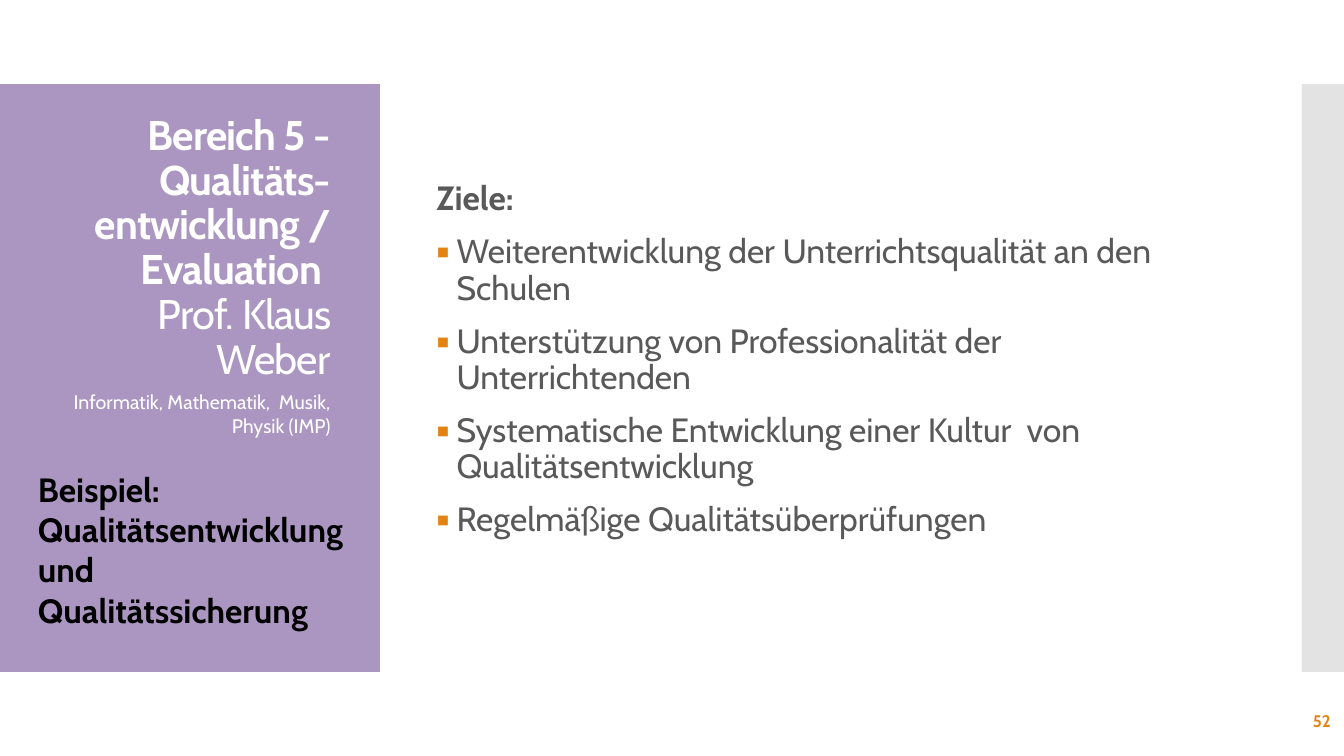
from pptx import Presentation
from pptx.dml.color import RGBColor
from pptx.enum.shapes import MSO_SHAPE as SHAPE
from pptx.enum.text import MSO_ANCHOR as ANCHOR, PP_ALIGN as ALIGN
from pptx.oxml.ns import qn
from pptx.util import Inches, Pt
from lxml.etree import SubElement

prs = Presentation()
prs.slide_width, prs.slide_height = Inches(13.33), Inches(7.5)
s = prs.slides.add_slide(prs.slide_layouts[6])
COL, ROW = prs.slide_width / 48, prs.slide_height / 36
rgb = RGBColor.from_string


def place(x, y, w, h):
    return int(x * COL), int(y * ROW), int(w * COL), int(h * ROW)


def add_run(p, text, size, color, bold=False):
    r = p.add_run()
    r.text = text
    r.font.name, r.font.size, r.font.bold = "Cabin", Pt(size), bold
    r.font.color.rgb = rgb(color)
    return r


for x, w, color, opacity in [(0, 13.57, "AA96C0", 100), (46.5, 1.5, "C8C8C8", 50)]:
    sp = s.shapes.add_shape(SHAPE.RECTANGLE, *place(x, 4, w, 28))
    sp.shadow.inherit = False
    sp.line.fill.background()
    sp.fill.solid()
    sp.fill.fore_color.rgb = rgb(color)
    if opacity < 100:
        clr = sp.fill._xPr.find(".//" + qn("a:srgbClr"))
        SubElement(clr, qn("a:alpha"), val=str(opacity * 1000))

frames = []
for x, y, w, h, anchor, align in [
    (1, 6, 11.16, 12.48, ANCHOR.BOTTOM, ALIGN.RIGHT),
    (1, 18.34, 11.16, 12.19, ANCHOR.TOP, ALIGN.RIGHT),
    (1, 22.08, 12.24, 8.26, ANCHOR.TOP, ALIGN.LEFT),
    (15.23, 4.56, 28.8, 26.88, ANCHOR.MIDDLE, ALIGN.LEFT),
    (41.87, 33.36, 6.01, 1.92, ANCHOR.MIDDLE, ALIGN.RIGHT),
]:
    tf = s.shapes.add_textbox(*place(x, y, w, h)).text_frame
    tf.word_wrap, tf.vertical_anchor = True, anchor
    tf.paragraphs[0].alignment = align
    frames.append(tf)
title, subjects, example, goals, number = frames

p = title.paragraphs[0]
p.line_spacing = 0.9
heading = add_run(p, "Bereich 5 - Qualitäts-entwicklung / Evaluation ", 29.6, "FFFFFF", True)
p.add_line_break()
speaker = add_run(p, "Prof. Klaus Weber", 29.6, "FFFFFF")
for r in (heading, speaker):
    r.font._element.set("spc", "-60")

add_run(subjects.paragraphs[0], "Informatik, Mathematik,  Musik, Physik (IMP)", 14, "FFFFFF")
add_run(example.paragraphs[0], "Beispiel: Qualitätsentwicklung und Qualitätssicherung", 24, "000000", True)
add_run(number.paragraphs[0], "52", 12, "E48312", True)

goals.margin_bottom = int(1.92 * ROW)
p = goals.paragraphs[0]
p.line_spacing = 0.9
add_run(p, "Ziele:", 24, "595959", True)
for goal in [
    "Weiterentwicklung der Unterrichtsqualität an den Schulen",
    "Unterstützung von Professionalität der Unterrichtenden",
    "Systematische Entwicklung einer Kultur  von Qualitätsentwicklung",
    "Regelmäßige Qualitätsüberprüfungen",
]:
    p = goals.add_paragraph()
    p.line_spacing, p.space_before = 0.9, Pt(12)
    pPr = p._p.get_or_add_pPr()
    pPr.set("marL", str(Inches(0.2)))
    pPr.set("indent", str(-Inches(0.2)))
    SubElement(SubElement(pPr, qn("a:buClr")), qn("a:srgbClr"), val="E48312")
    SubElement(pPr, qn("a:buFont"), typeface="Cabin")
    SubElement(pPr, qn("a:buChar"), char="▪")
    add_run(p, goal, 24, "595959")

prs.save("out.pptx")
